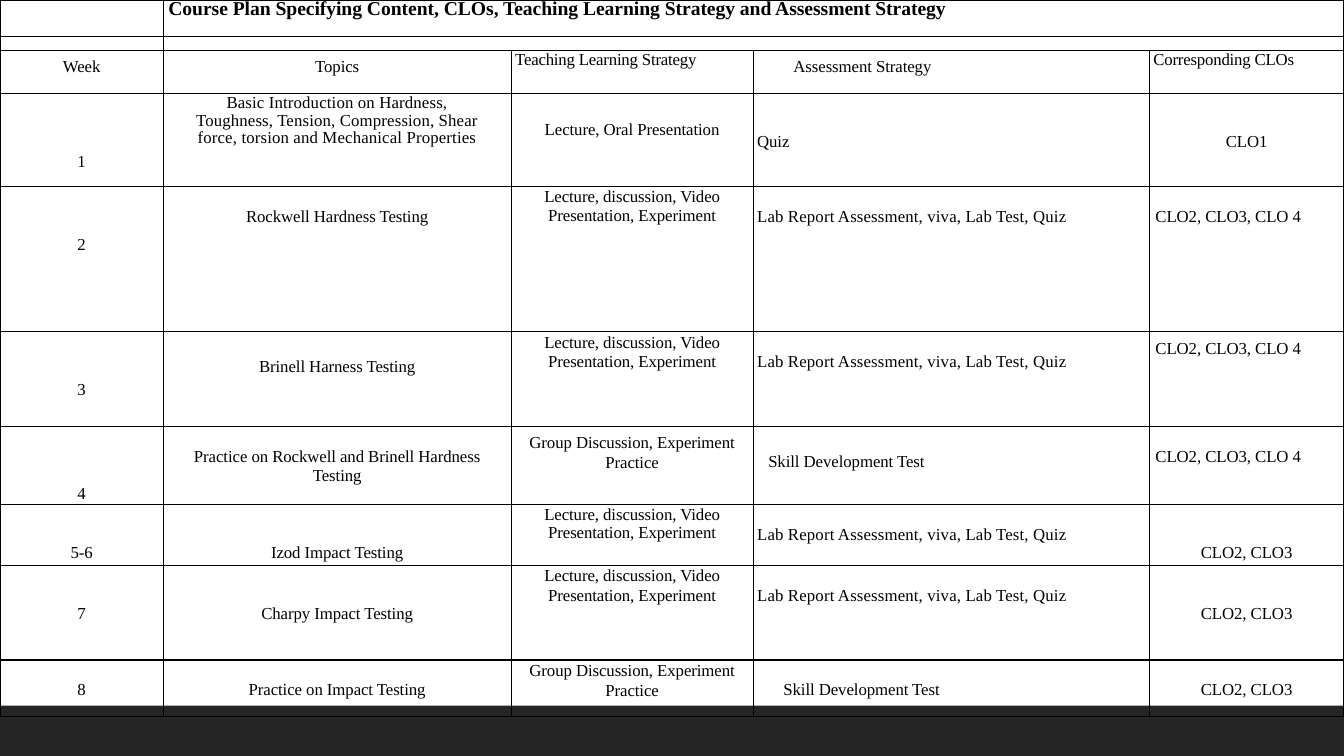
from dataclasses import dataclass

import pptx
import pptx.dml.color
import pptx.enum.shapes
import pptx.enum.text
import pptx.oxml
import pptx.oxml.ns
import pptx.util

Inches = pptx.util.Inches
Pt = pptx.util.Pt
ALIGN = pptx.enum.text.PP_ALIGN


@dataclass(frozen=True)
class Theme:
    font: str = "Times New Roman"
    ink: str = "000000"
    bar: str = "262626"
    title_size: float = 14
    body_size: float = 12
    line_spacing: float = 13.8
    border: float = 1


COLUMN_WIDTHS = [1.62, 3.45, 2.4, 3.93, 1.93]
ROW_HEIGHTS = [0.36, 0.14, 0.43, 0.92, 1.44, 0.94, 0.78, 0.6, 0.94, 0.56]
TITLE = "Course Plan Specifying Content, CLOs, Teaching Learning Strategy and Assessment Strategy"

WEEK = {}
TOPIC = {"left": 0.27, "right": 0.27}
TEACHING = {}
ASSESSMENT = {"align": ALIGN.LEFT, "left": 0.04}
OUTCOME = {}
COLUMN_FORMATS = [WEEK, TOPIC, TEACHING, ASSESSMENT, OUTCOME]

LECTURE = "Lecture, discussion, Video Presentation, Experiment"
GROUP = "Group Discussion, Experiment Practice"
LAB = ("Lab Report Assessment, viva, Lab Test, Quiz", 0.2, {"spacing": 0.1})
SKILL = "Skill Development Test"
THREE_CLOS = "CLO2, CLO3, CLO 4"
TWO_CLOS = "CLO2, CLO3"
CLO_LEFT = {"align": ALIGN.LEFT, "left": 0.06}
HEADER_LEFT = {"align": ALIGN.LEFT, "left": 0.04, "spacing": -0.15}
BASICS = ("Basic Introduction on Hardness, Toughness, Tension, Compression, "
          "Shear force, torsion and Mechanical Properties")

# Each cell: text, distance from the top of its row, and optional format changes.
PLAN = [
    [("Week", 0.06), ("Topics", 0.06),
     ("Teaching Learning Strategy", 0, HEADER_LEFT),
     ("Assessment Strategy", 0.06, {"left": 0.4}),
     ("Corresponding CLOs", 0, HEADER_LEFT)],
    [("1", 0.58), (BASICS, 0.01, {"spacing": 0.1, "line_spacing": 0.94}),
     ("Lecture, Oral Presentation", 0.26), ("Quiz", 0.38), ("CLO1", 0.38)],
    [("2", 0.48), ("Rockwell Hardness Testing", 0.2), (LECTURE, 0), LAB,
     (THREE_CLOS, 0.2, CLO_LEFT)],
    [("3", 0.48), ("Brinell Harness Testing", 0.25), (LECTURE, 0.01), LAB,
     (THREE_CLOS, 0.07, CLO_LEFT)],
    [("4", 0.57), ("Practice on Rockwell and Brinell Hardness Testing", 0.2),
     (GROUP, 0.07), (SKILL, 0.25, {"left": 0.15}), (THREE_CLOS, 0.2, CLO_LEFT)],
    [("5-6", 0.38), ("Izod Impact Testing", 0.38),
     (LECTURE, 0.01, {"line_spacing": 0.96}), LAB, (TWO_CLOS, 0.38)],
    [("7", 0.38), ("Charpy Impact Testing", 0.38), (LECTURE, 0.01), LAB,
     (TWO_CLOS, 0.38)],
    [("8", 0.2), ("Practice on Impact Testing", 0.2), (GROUP, 0.01),
     (SKILL, 0.2, {"left": 0.3}), (TWO_CLOS, 0.2)],
]


def write_text(cell, text, theme, *, top=0, left=0, right=0, align=ALIGN.CENTER,
               size=None, bold=False, spacing=-0.05, line_spacing=None):
    """Fill a cell; margins are in inches, letter spacing in points."""
    cell.margin_top = Inches(top)
    cell.margin_left = Inches(left)
    cell.margin_right = Inches(right)
    paragraph = cell.text_frame.paragraphs[0]
    paragraph.alignment = align
    paragraph.line_spacing = line_spacing or Pt(theme.line_spacing)
    run = paragraph.add_run()
    run.text = text
    run.font.name = theme.font
    run.font.size = Pt(size or theme.body_size)
    run.font.bold = bold
    run.font.color.rgb = pptx.dml.color.RGBColor.from_string(theme.ink)
    run.font._element.set("spc", str(round(spacing * 100)))


class CoursePlanSlide:
    def __init__(self, presentation, theme):
        self.theme = theme
        self.slide = presentation.slides.add_slide(presentation.slide_layouts[6])

    def add_bar(self, left, top, width, height):
        bar = self.slide.shapes.add_shape(
            pptx.enum.shapes.MSO_SHAPE.RECTANGLE,
            Inches(left), Inches(top), Inches(width), Inches(height))
        bar.shadow.inherit = False
        bar.fill.solid()
        bar.fill.fore_color.rgb = pptx.dml.color.RGBColor.from_string(self.theme.bar)
        bar.line.fill.background()

    def add_table(self, widths, heights):
        table = self.slide.shapes.add_table(
            len(heights), len(widths), 0, 0,
            Inches(sum(widths)), Inches(sum(heights))).table
        table.first_row = False
        table.horz_banding = False
        for column, width in zip(table.columns, widths):
            column.width = Inches(width)
        for row, height in zip(table.rows, heights):
            row.height = Inches(height)
            for cell in row.cells:
                self.style_cell(cell)
        return table

    def style_cell(self, cell):
        """Clear margins and fill, draw borders and keep an empty cell low."""
        cell.margin_left = cell.margin_right = 0
        cell.margin_top = cell.margin_bottom = 0
        properties = cell._tc.get_or_add_tcPr()
        for side in ("lnL", "lnR", "lnT", "lnB"):
            properties.append(pptx.oxml.parse_xml(
                f'<a:{side} {pptx.oxml.ns.nsdecls("a")} w="{Pt(self.theme.border)}">'
                f'<a:solidFill><a:srgbClr val="{self.theme.ink}"/></a:solidFill>'
                f'</a:{side}>'))
        cell.fill.background()
        cell.text_frame.paragraphs[0]._p.append(pptx.oxml.parse_xml(
            f'<a:endParaRPr {pptx.oxml.ns.nsdecls("a")} sz="100"/>'))

    def add_course_plan(self):
        table = self.add_table(COLUMN_WIDTHS, ROW_HEIGHTS)
        for row in range(2):
            table.cell(row, 1).merge(table.cell(row, 4))
        write_text(table.cell(0, 1), TITLE, self.theme, left=0.05,
                   align=ALIGN.LEFT, size=self.theme.title_size, bold=True)
        for row, entries in enumerate(PLAN, start=2):
            for column, (text, top, *changes) in enumerate(entries):
                cell_format = dict(COLUMN_FORMATS[column])
                for change in changes:
                    cell_format.update(change)
                write_text(table.cell(row, column), text, self.theme,
                           top=top, **cell_format)


def main():
    presentation = pptx.Presentation()
    presentation.slide_width = Inches(13.33)
    presentation.slide_height = Inches(7.5)
    course_plan = CoursePlanSlide(presentation, Theme())
    course_plan.add_bar(0, 7, 13.33, 0.5)
    course_plan.add_course_plan()
    presentation.save("out.pptx")


if __name__ == "__main__":
    main()
